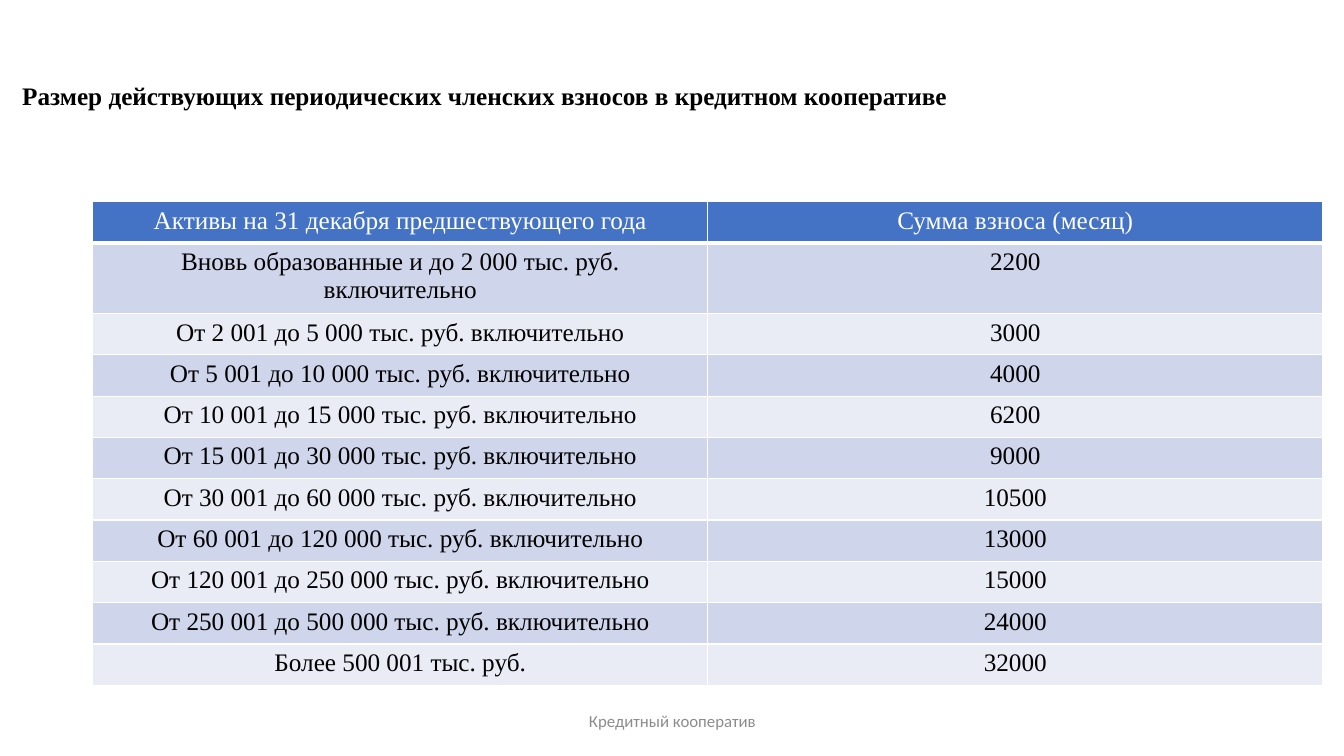
import pptx
import pptx.util
import pptx.dml.color
import pptx.enum.text
import pptx.oxml
import pptx.oxml.ns

TITLE = "Размер действующих периодических членских взносов в кредитном кооперативе"
FOOTER = "Кредитный кооператив"
HEADER = ("Активы на 31 декабря предшествующего года", "Сумма взноса (месяц)")
FEES = [
    ("Вновь образованные и до 2 000 тыс. руб. включительно", "2200"),
    ("От 2 001 до 5 000 тыс. руб. включительно", "3000"),
    ("От 5 001 до 10 000 тыс. руб. включительно", "4000"),
    ("От 10 001 до 15 000 тыс. руб. включительно", "6200"),
    ("От 15 001 до 30 000 тыс. руб. включительно", "9000"),
    ("От 30 001 до 60 000 тыс. руб. включительно", "10500"),
    ("От 60 001 до 120 000 тыс. руб. включительно", "13000"),
    ("От 120 001 до 250 000 тыс. руб. включительно", "15000"),
    ("От 250 001 до 500 000 тыс. руб. включительно", "24000"),
    ("Более 500 001 тыс. руб.", "32000"),
]
HEADER_FILL = "4472C4"
BAND_FILLS = ("CFD5EA", "E9EBF5")
COLUMN_WIDTH, ROW_HEIGHT, WRAPPED_ROW_HEIGHT = 6.1, 0.41, 0.7

inches = pptx.util.Inches
ALIGN = pptx.enum.text.PP_ALIGN
ANCHOR = pptx.enum.text.MSO_ANCHOR


def color(value):
    return pptx.dml.color.RGBColor.from_string(value)


def write(frame, text, font="Times New Roman", size=18, fill="000000", bold=False, align=ALIGN.CENTER):
    frame.word_wrap = True
    paragraph = frame.paragraphs[0]
    paragraph.alignment = align
    run = paragraph.add_run()
    run.text = text
    run.font.name = font
    run.font.size = pptx.util.Pt(size)
    run.font.bold = bold
    run.font.color.rgb = color(fill)


def add_borders(cell, bottom):
    properties = cell._tc.get_or_add_tcPr()
    for index, (side, width) in enumerate((("L", 1), ("R", 1), ("T", 1), ("B", bottom))):
        properties.insert(index, pptx.oxml.parse_xml(
            f'<a:ln{side} {pptx.oxml.ns.nsdecls("a")} w="{pptx.util.Pt(width)}">'
            f'<a:solidFill><a:srgbClr val="FFFFFF"/></a:solidFill></a:ln{side}>'))


def add_fee_table(slide):
    rows = [HEADER] + FEES
    table = slide.shapes.add_table(
        len(rows), len(HEADER), inches(0.92), inches(2),
        inches(COLUMN_WIDTH * len(HEADER)), inches(ROW_HEIGHT * len(rows))).table
    for column in table.columns:
        column.width = inches(COLUMN_WIDTH)
    for row_index, values in enumerate(rows):
        is_header = row_index == 0
        table.rows[row_index].height = inches(WRAPPED_ROW_HEIGHT if row_index == 1 else ROW_HEIGHT)
        for column_index, value in enumerate(values):
            cell = table.cell(row_index, column_index)
            cell.fill.solid()
            cell.fill.fore_color.rgb = color(HEADER_FILL if is_header else BAND_FILLS[(row_index - 1) % 2])
            add_borders(cell, bottom=3 if is_header else 1)
            write(cell.text_frame, value, fill="FFFFFF" if is_header else "000000")


def main():
    presentation = pptx.Presentation()
    presentation.slide_width = inches(13.33)
    presentation.slide_height = inches(7.5)
    slide = presentation.slides.add_slide(presentation.slide_layouts[5])

    title = slide.shapes.title
    title.left, title.top, title.width, title.height = map(inches, (0.12, 0.75, 12.69, 0.71))
    title.text_frame.vertical_anchor = ANCHOR.TOP
    title.text_frame.auto_size = pptx.enum.text.MSO_AUTO_SIZE.NONE
    write(title.text_frame, TITLE, bold=True, align=ALIGN.LEFT)

    add_fee_table(slide)

    footer = slide.shapes.add_textbox(*map(inches, (4.42, 6.95, 4.5, 0.4)))
    footer.text_frame.vertical_anchor = ANCHOR.MIDDLE
    write(footer.text_frame, FOOTER, font="Calibri", size=12, fill="8C8C8C")

    presentation.save("out.pptx")


if __name__ == "__main__":
    main()
